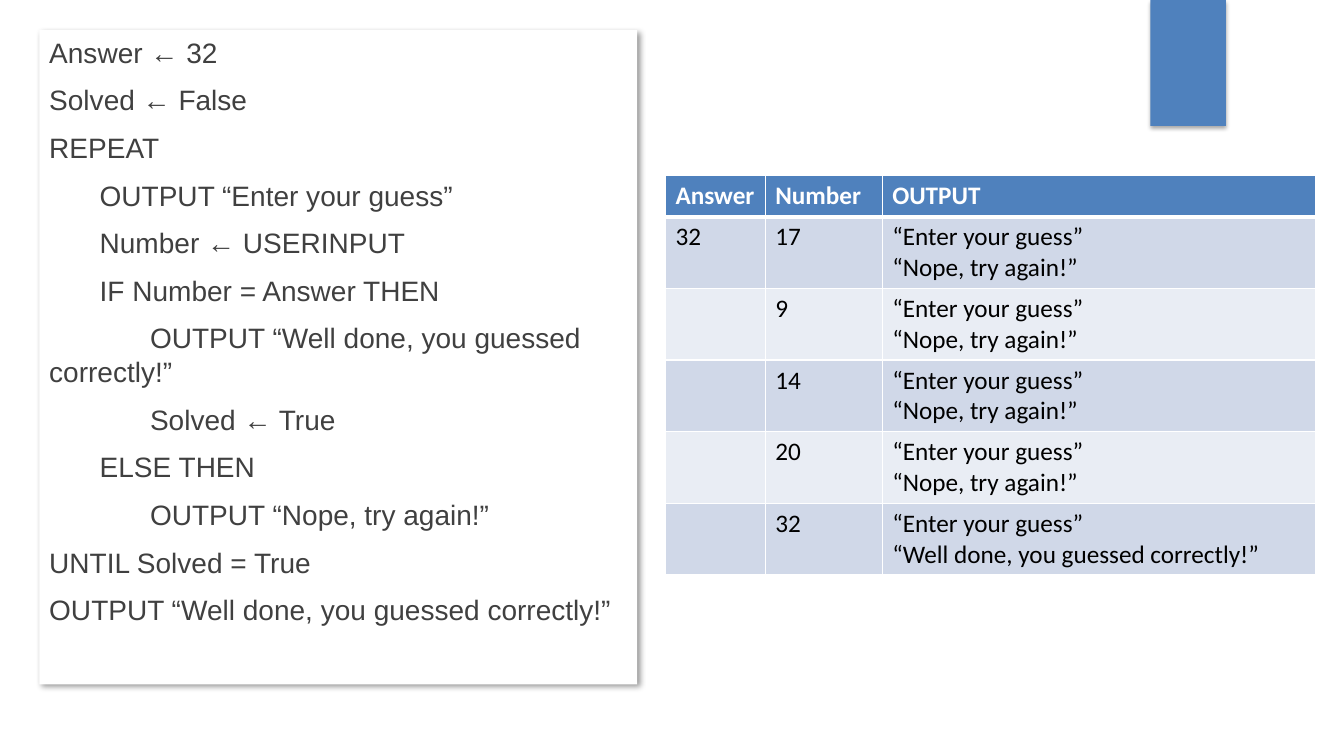
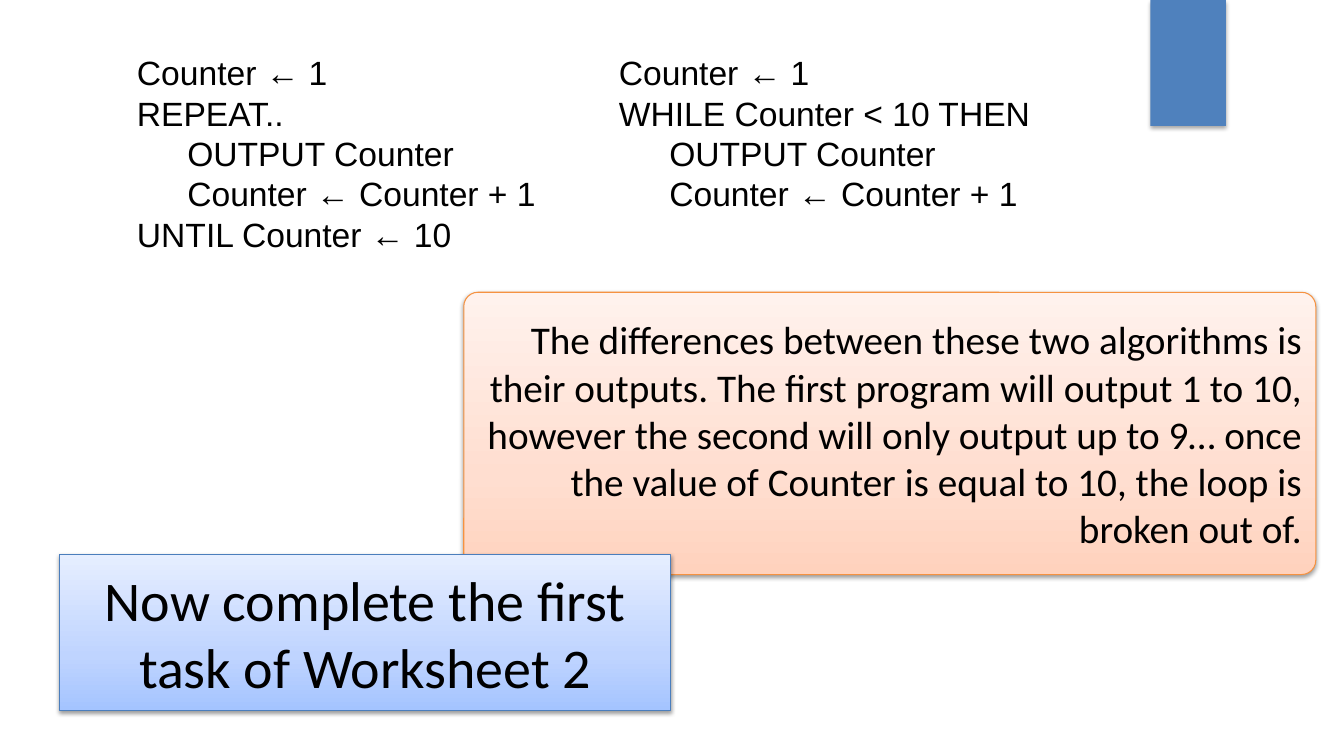
from copy import deepcopy

from lxml import etree
from pptx import Presentation
from pptx.dml.color import RGBColor
from pptx.enum.shapes import MSO_SHAPE
from pptx.enum.text import MSO_ANCHOR, PP_ALIGN
from pptx.oxml.ns import qn
from pptx.util import Inches, Pt

RECTANGLE, ROUNDED = MSO_SHAPE.RECTANGLE, MSO_SHAPE.ROUNDED_RECTANGLE
TOP, MIDDLE = MSO_ANCHOR.TOP, MSO_ANCHOR.MIDDLE
LEFT, CENTER, RIGHT = PP_ALIGN.LEFT, PP_ALIGN.CENTER, PP_ALIGN.RIGHT

CODE_FONT, BODY_FONT = "Arial", "Calibri"
BLUE, WHITE, BLACK, GREY = "4F81BD", "FFFFFF", "000000", "404040"
BAND_FILLS = ("E9EDF4", "D0D8E8")
BLUE_PANEL = (("A4C4FF", "BFD4FF", "E6EEFF"), "4B7EBC")
ORANGE_PANEL = (("FFD2BD", "FFDED0", "FFF2ED"), "F69240")
GRADIENT_POSITIONS = (0, 0.35, 1)
TAB_STOPS = (0.5, 1)

GUESS_CODE = [
    "Answer ← 32",
    "Solved ← False",
    "REPEAT",
    "\tOUTPUT “Enter your guess”",
    "\tNumber ← USERINPUT",
    "\tIF Number = Answer THEN",
    "\t\tOUTPUT “Well done, you guessed correctly!”",
    "\t\tSolved ← True",
    "\tELSE THEN",
    "\t\tOUTPUT “Nope, try again!”",
    "UNTIL Solved = True",
    "OUTPUT “Well done, you guessed correctly!”",
]
PROMPT = "“Enter your guess”\n"
WRONG = PROMPT + "“Nope, try again!”"
CORRECT = PROMPT + "“Well done, you guessed correctly!”"
TRACE_ROWS = [
    ("Answer", "Number", "OUTPUT"),
    ("32", "17", WRONG),
    ("", "9", WRONG),
    ("", "14", WRONG),
    ("", "20", WRONG),
    ("", "32", CORRECT),
]
LOOP_BODY = ["\tOUTPUT Counter", "\tCounter ← Counter + 1"]
REPEAT_CODE = ["Counter ← 1", "REPEAT..", *LOOP_BODY, "UNTIL Counter ← 10"]
WHILE_CODE = ["Counter ← 1", "WHILE Counter < 10 THEN", *LOOP_BODY]
EXPLANATION = (
    "The differences between these two algorithms is their outputs. "
    "The first program will output 1 to 10, however the second will only "
    "output up to 9… once the value of Counter is equal to 10, the loop is "
    "broken out of."
)


def color(value):
    """Return the colour for a hex string."""
    return RGBColor.from_string(value)


class LessonDeck:
    """Hold the lesson style and the slide being built."""

    def __init__(self):
        """Start an empty widescreen deck."""
        self.deck = Presentation()
        self.deck.slide_width = Inches(13.33)
        self.deck.slide_height = Inches(7.5)
        self.page = None

    def new_page(self):
        """Add a slide with the blue tab at its top edge."""
        self.page = self.deck.slides.add_slide(self.deck.slide_layouts[6])
        tab = self.shape(RECTANGLE, 11.41, 0, 0.75, 1.25, BLUE)
        self.shadow(tab, 35, 3.1, 1.8, 90)

    def shape(self, kind, left, top, width, height, fill):
        """Add an unlined preset shape with a solid fill."""
        box = self.page.shapes.add_shape(
            kind, Inches(left), Inches(top), Inches(width), Inches(height))
        box.shadow.inherit = False
        box.fill.solid()
        box.fill.fore_color.rgb = color(fill)
        box.line.fill.background()
        return box

    def shadow(self, box, opacity, blur, distance, angle):
        """Give a shape a soft black shadow."""
        effects = box._element.spPr.find(qn("a:effectLst"))
        outer = etree.SubElement(
            effects, qn("a:outerShdw"), blurRad=str(Pt(blur)),
            dist=str(Pt(distance)), dir=str(angle * 60000), rotWithShape="0")
        tint = etree.SubElement(outer, qn("a:srgbClr"), val=BLACK)
        etree.SubElement(tint, qn("a:alpha"), val=str(opacity * 1000))

    def format_text(self, frame, font, size, ink, align=LEFT, bold=False):
        """Format every paragraph of a text frame alike."""
        for para in frame.paragraphs:
            para.alignment = align
            for span in para.runs:
                span.font.name = font
                span.font.size = Pt(size)
                span.font.bold = bold
                span.font.color.rgb = color(ink)

    def code(self, box, lines, size, ink, gap=0):
        """Fill a box with pseudocode on half-inch tab stops."""
        frame = box.text_frame
        frame.word_wrap = True
        frame.vertical_anchor = TOP
        frame.text = "\n".join(lines)
        for index, para in enumerate(frame.paragraphs):
            tabs = etree.SubElement(
                para._p.get_or_add_pPr(), qn("a:tabLst"))
            for stop in TAB_STOPS:
                etree.SubElement(
                    tabs, qn("a:tab"), pos=str(Inches(stop)), algn="l")
            para.space_before = Pt(gap if index else 0)
        self.format_text(frame, CODE_FONT, size, ink)

    def code_card(self, left, top, width, height, lines):
        """Add pseudocode on a white shadowed card."""
        card = self.shape(RECTANGLE, left, top, width, height, WHITE)
        self.shadow(card, 40, 4, 3, 45)
        self.code(card, lines, 20, GREY, gap=10)

    def code_text(self, left, top, width, height, lines):
        """Add pseudocode straight on the slide."""
        box = self.page.shapes.add_textbox(
            Inches(left), Inches(top), Inches(width), Inches(height))
        self.code(box, lines, 24, BLACK)

    def panel(self, kind, left, top, width, height, style, text, size, align):
        """Add a gradient panel with a message."""
        stops, outline = style
        box = self.shape(kind, left, top, width, height, stops[0])
        box.fill.gradient()
        box.fill.gradient_angle = 90
        stop_list = box._element.spPr.find(".//" + qn("a:gsLst"))
        stop_list.insert(1, deepcopy(stop_list[0]))
        for stop, position, value in zip(
                box.fill.gradient_stops, GRADIENT_POSITIONS, stops):
            stop.position = position
            stop.color.rgb = color(value)
        box.line.color.rgb = color(outline)
        box.line.width = Pt(0.75)
        self.shadow(box, 38, 3.1, 1.6, 90)
        frame = box.text_frame
        frame.word_wrap = True
        frame.vertical_anchor = MIDDLE
        frame.text = text
        self.format_text(frame, BODY_FONT, size, BLACK, align)
        return box

    def borders(self, cell, top, bottom):
        """Draw white borders round a table cell."""
        properties = cell._tc.get_or_add_tcPr()
        widths = {"lnL": 1, "lnR": 1, "lnT": top, "lnB": bottom}
        for index, (side, width) in enumerate(widths.items()):
            edge = etree.Element(qn("a:" + side), w=str(Pt(width)))
            fill = etree.SubElement(edge, qn("a:solidFill"))
            etree.SubElement(fill, qn("a:srgbClr"), val=WHITE)
            properties.insert(index, edge)

    def table(self, left, top, widths, heights, rows):
        """Add a banded table with a blue header row."""
        grid = self.page.shapes.add_table(
            len(rows), len(widths), Inches(left), Inches(top),
            Inches(sum(widths)), Inches(sum(heights))).table
        for column, width in zip(grid.columns, widths):
            column.width = Inches(width)
        for index, (row, height, values) in enumerate(
                zip(grid.rows, heights, rows)):
            row.height = Inches(height)
            header = index == 0
            for cell, value in zip(row.cells, values):
                cell.text = value
                cell.fill.solid()
                cell.fill.fore_color.rgb = color(
                    BLUE if header else BAND_FILLS[index % 2])
                self.borders(cell, 3 if index == 1 else 1, 3 if header else 1)
                self.format_text(cell.text_frame, BODY_FONT, 18,
                                 WHITE if header else BLACK, bold=header)


def main():
    """Build and save the lesson."""
    lesson = LessonDeck()

    lesson.new_page()
    lesson.code_card(0.39, 0.3, 5.93, 6.49, GUESS_CODE)
    lesson.table(6.6, 1.74, (0.99, 1.16, 4.3), [0.41] + [0.7] * 5, TRACE_ROWS)

    lesson.new_page()
    lesson.code_text(1.26, 0.47, 6.67, 2.93, REPEAT_CODE)
    lesson.code_text(6.04, 0.47, 6.67, 1.72, WHILE_CODE)
    explanation = lesson.panel(ROUNDED, 4.6, 2.9, 8.45, 2.8, ORANGE_PANEL,
                               EXPLANATION, 28, RIGHT)
    explanation.adjustments[0] = 0.05
    lesson.panel(RECTANGLE, 0.59, 5.5, 6.06, 1.55, BLUE_PANEL,
                 "Now complete the first task of Worksheet 2", 40, CENTER)

    lesson.deck.save("out.pptx")


if __name__ == "__main__":
    main()
